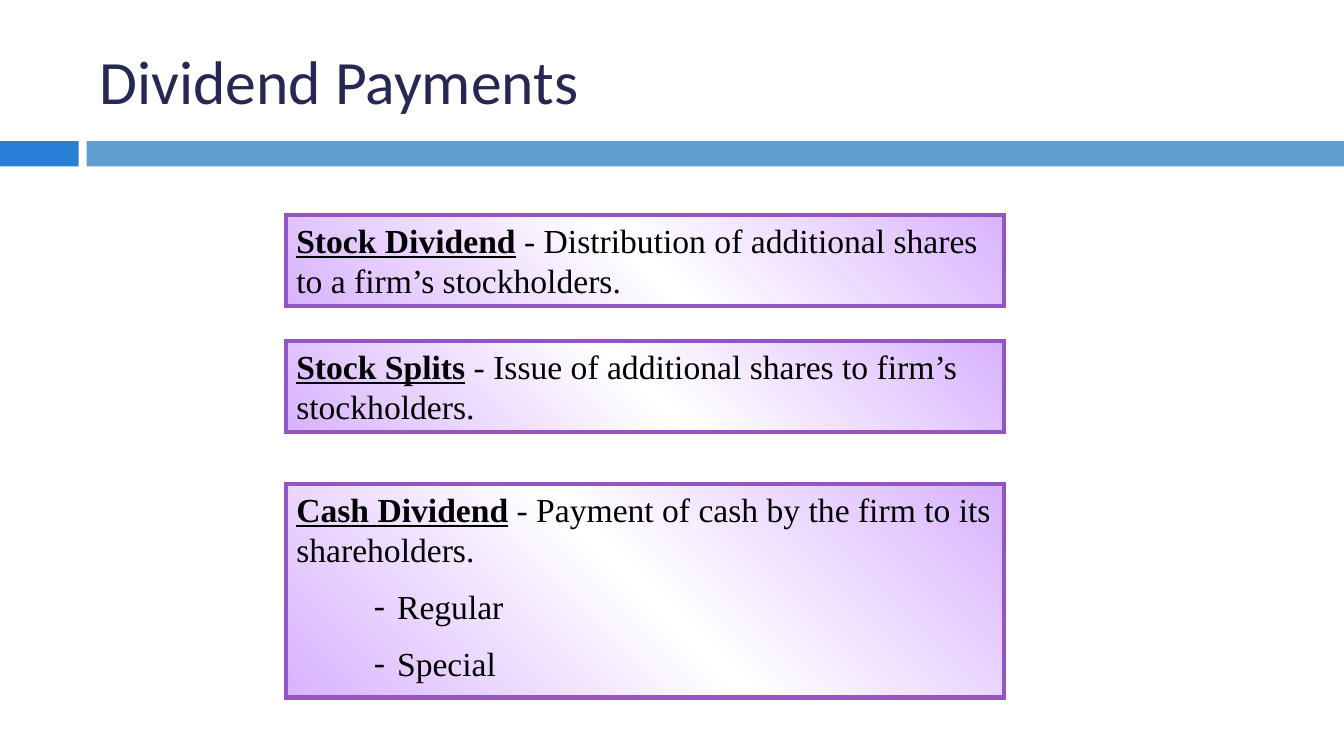
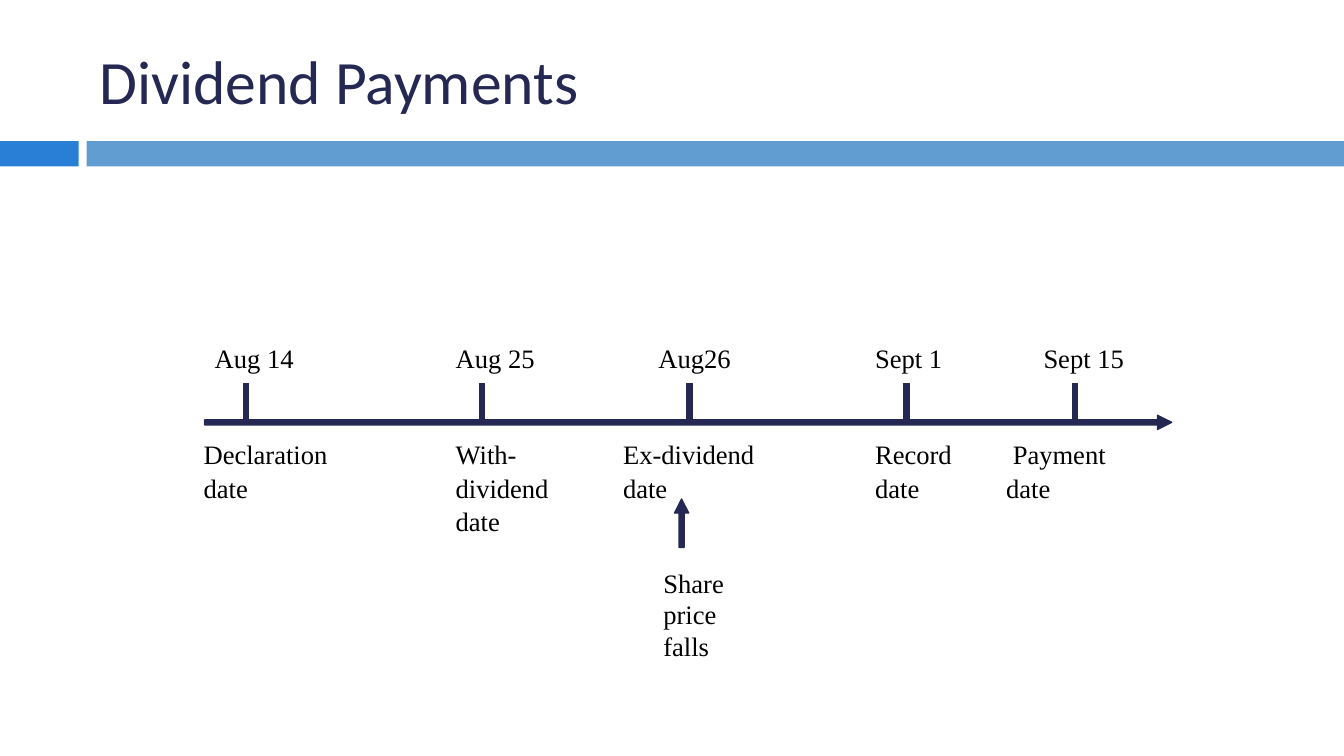
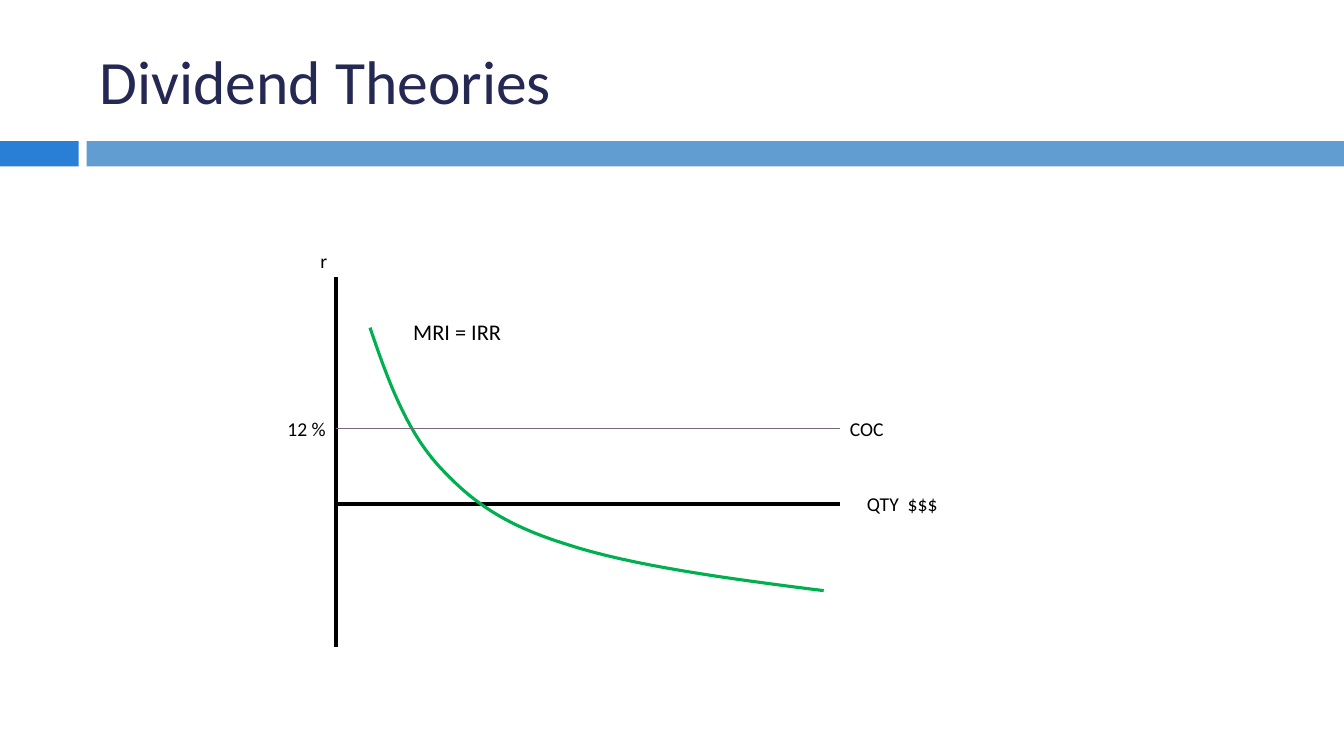
from lxml import etree
from pptx import Presentation
from pptx.dml.color import RGBColor
from pptx.enum.shapes import MSO_CONNECTOR, MSO_SHAPE
from pptx.enum.text import MSO_ANCHOR, PP_ALIGN
from pptx.oxml.ns import qn
from pptx.util import Inches, Pt

RECTANGLE = MSO_SHAPE.RECTANGLE
STRAIGHT = MSO_CONNECTOR.STRAIGHT
TOP, MIDDLE = MSO_ANCHOR.TOP, MSO_ANCHOR.MIDDLE
LEFT, RIGHT = PP_ALIGN.LEFT, PP_ALIGN.RIGHT

COLORS = {
    "navy": "242852", "accent": "297FD5", "band": "629DD1",
    "lilac": "D9B3FF", "white": "FFFFFF", "purple": "9454C3",
    "black": "000000", "green": "00B050", "mauve": "78697B",
}
SANS, SERIF = "Calibri", "Times New Roman"


def rgb(name):
    return RGBColor.from_string(COLORS[name])


class SlideBuilder:
    """Holds the shared style and the slide being built."""

    def __init__(self):
        self.deck = Presentation()
        self.deck.slide_width = Inches(13.33)
        self.deck.slide_height = Inches(7.5)
        self.page = None

    def new_page(self, title):
        self.page = self.deck.slides.add_slide(self.deck.slide_layouts[6])
        self.band(0, 0.78, "accent")
        self.band(0.86, 12.47, "band")
        self.text(title, 0.89, 0.25, 11.89, 1.08, size=44, color="navy", anchor=MIDDLE)

    def rectangle(self, left, top, width, height):
        shape = self.page.shapes.add_shape(
            RECTANGLE, Inches(left), Inches(top), Inches(width), Inches(height))
        shape.shadow.inherit = False
        return shape

    def band(self, left, width, color):
        shape = self.rectangle(left, 1.4, width, 0.25)
        shape.fill.solid()
        shape.fill.fore_color.rgb = rgb(color)
        shape.line.fill.background()

    def style(self, para, font, size, color="black"):
        para.font.name = font
        para.font.size = Pt(size)
        para.font.color.rgb = rgb(color)

    def text(self, words, left, top, width, height, size=14, font=SANS, color="black",
             align=LEFT, anchor=TOP, inset=True, spacing=1.0):
        box = self.page.shapes.add_textbox(
            Inches(left), Inches(top), Inches(width), Inches(height))
        frame = box.text_frame
        frame.word_wrap = True
        frame.vertical_anchor = anchor
        if not inset:
            frame.margin_left = frame.margin_right = 0
            frame.margin_top = frame.margin_bottom = 0
        frame.text = words
        for para in frame.paragraphs:
            para.alignment = align
            para.line_spacing = spacing
            self.style(para, font, size, color)

    def definition(self, term, meaning, top, height, items=()):
        """A gradient box with an underlined term, its meaning and dashed items."""
        box = self.rectangle(2.84, top, 7.12, height)
        self.gradient(box)
        box.line.color.rgb = rgb("purple")
        box.line.width = Pt(3)
        etree.SubElement(box.line._get_or_add_ln(), qn("a:miter"), lim="800000")
        frame = box.text_frame
        frame.word_wrap = True
        frame.vertical_anchor = TOP
        para = frame.paragraphs[0]
        para.alignment = LEFT
        self.style(para, SERIF, 24)
        span = para.add_run()
        span.text = term
        span.font.bold = span.font.underline = True
        para.add_run().text = " - " + meaning
        for item in items:
            para = frame.add_paragraph()
            para.text = item
            para.alignment = LEFT
            para.space_before = Pt(12)
            self.style(para, SERIF, 24)
            self.dash(para)

    def gradient(self, shape):
        """Lilac at both ends, white halfway."""
        shape.fill.gradient()
        shape.fill.gradient_angle = 45
        stops = shape._element.spPr.find(".//" + qn("a:gsLst"))
        for stop in list(stops):
            stops.remove(stop)
        for position, color in ((0, "lilac"), (50, "white"), (100, "lilac")):
            stop = etree.SubElement(stops, qn("a:gs"), pos=str(position * 1000))
            etree.SubElement(stop, qn("a:srgbClr"), val=COLORS[color])

    def dash(self, para):
        props = para._p.get_or_add_pPr()
        props.set("marL", str(Inches(1)))
        props.set("indent", str(-Inches(0.23)))
        defaults = props.find(qn("a:defRPr"))
        defaults.addprevious(etree.Element(qn("a:buFont"), typeface=SERIF))
        defaults.addprevious(etree.Element(qn("a:buChar"), char="-"))

    def line(self, start, end, color, width):
        line = self.page.shapes.add_connector(
            STRAIGHT, *(Inches(value) for value in (*start, *end)))
        line.line.color.rgb = rgb(color)
        line.line.width = Pt(width)
        etree.SubElement(line._element.spPr, qn("a:effectLst"))

    def outline(self, points, color, width, close):
        """A freeform through points given in inches."""
        first, *others = [(Inches(x), Inches(y)) for x, y in points]
        builder = self.page.shapes.build_freeform(*first)
        builder.add_line_segments(others, close=close)
        shape = builder.convert_to_shape()
        shape.shadow.inherit = False
        shape.line.color.rgb = rgb(color)
        shape.line.width = Pt(width)
        return shape

    def block_arrow(self, tip, length, color, upward=False):
        """A thin solid arrow that points right or up."""
        head, wing, half = 0.14, 0.07, 0.025
        profile = ((0, 0), (head, -wing), (head, -half), (length, -half),
                   (length, half), (head, half), (head, wing))
        x, y = tip
        points = [(x + side, y + back) if upward else (x - back, y + side)
                  for back, side in profile]
        shape = self.outline(points, color, 1, close=True)
        shape.fill.solid()
        shape.fill.fore_color.rgb = rgb(color)

    def curve(self, start, segments, color, width, steps=16):
        """A smooth open outline through cubic segments."""
        points = [start]
        for first, second, end in segments:
            origin = points[-1]
            for step in range(1, steps + 1):
                t = step / steps
                u = 1 - t
                points.append(tuple(
                    u**3 * a + 3 * u * u * t * b + 3 * u * t * t * c + t**3 * d
                    for a, b, c, d in zip(origin, first, second, end)))
        self.outline(points, color, width, close=False).fill.background()


def definitions(builder):
    builder.new_page("Dividend Payments")
    builder.definition("Stock Dividend",
                       "Distribution of additional shares to a firm’s stockholders.", 2.13, 0.91)
    builder.definition("Stock Splits",
                       "Issue of additional shares to firm’s stockholders.", 3.38, 0.91)
    builder.definition("Cash Dividend", "Payment of cash by the firm to its shareholders.",
                       4.8, 2.12, ("Regular", "Special"))


def timeline(builder):
    builder.new_page("Dividend Payments")
    label = {"size": 19, "font": SERIF, "inset": False}
    axis = 4.19
    # Date, its left, tick, event, its left
    events = (
        ("Aug 14", 2.13, 2.44, "Declaration\ndate", 2.02),
        ("Aug 25", 4.52, 4.78, "With-\ndividend\ndate", 4.52),
        ("Aug26", 6.53, 6.84, "Ex-dividend\ndate", 6.18),
        ("Sept 1", 8.68, 8.99, "Record\ndate", 8.68),
        ("Sept 15", 10.35, 10.66, " Payment\ndate", 9.98),
    )
    for date, date_left, tick, event, event_left in events:
        builder.text(date, date_left, 3.39, 1.2, 0.35, **label)
        builder.text(event, event_left, 4.33, 1.5, 1, spacing=1.05, **label)
        builder.line((tick, 3.8), (tick, axis), "navy", 4.5)
    builder.block_arrow((11.62, axis), 9.59, "navy")
    # Price drop
    builder.block_arrow((6.76, 4.95), 0.48, "navy", upward=True)
    builder.text("Share\nprice\nfalls", 6.58, 5.62, 1, 1, **label)


def theories(builder):
    builder.new_page("Dividend Theories")
    # Axes, return curve and cost of capital
    builder.line((3.33, 2.75), (3.33, 6.42), "black", 3)
    builder.line((3.33, 5), (8.33, 5), "black", 3)
    builder.curve((3.67, 3.25), (
        ((3.84, 3.75), (4.02, 4.25), (4.34, 4.61)),
        ((4.67, 4.97), (4.98, 5.2), (5.62, 5.4)),
        ((6.26, 5.61), (7.21, 5.74), (8.17, 5.86)),
    ), "green", 2.25)
    builder.line((3.33, 4.25), (8.33, 4.25), "mauve", 0.75)
    # Labels
    builder.text("MRI = IRR", 4, 3.11, 1.42, 0.37, size=16)
    builder.text("COC", 8.33, 4.09, 1.42, 0.34)
    builder.text("12 %", 2.66, 4.09, 0.67, 0.34, align=RIGHT)
    builder.text("r", 3.08, 2.42, 0.33, 0.34)
    builder.text("QTY  $$$", 8.5, 4.83, 1.42, 0.34)


def main():
    builder = SlideBuilder()
    definitions(builder)
    timeline(builder)
    theories(builder)
    builder.deck.save("out.pptx")


if __name__ == "__main__":
    main()
